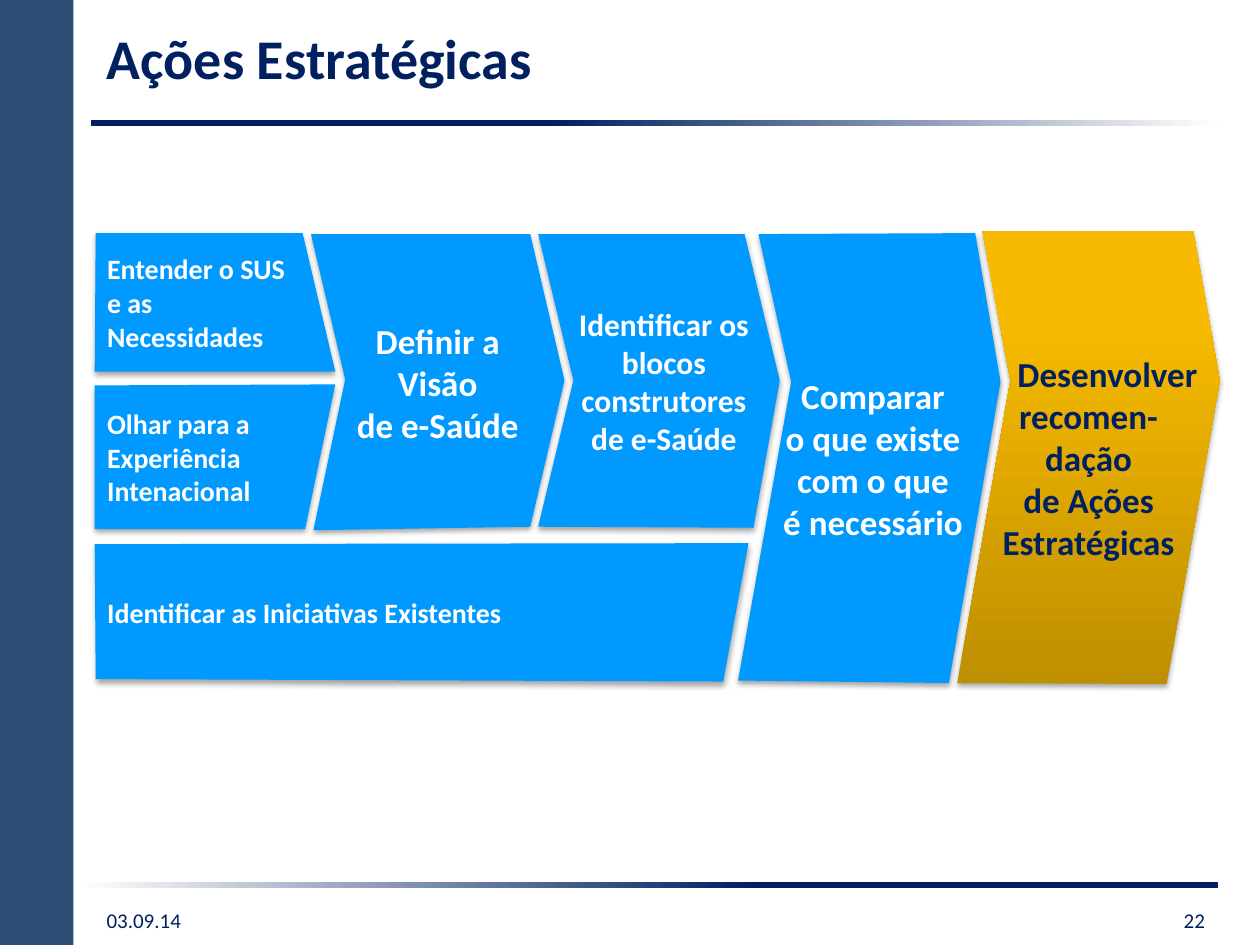
from lxml import etree
from pptx import Presentation, util as u
from pptx.dml.color import RGBColor
from pptx.enum import shapes, text
from pptx.oxml import parse_xml
from pptx.oxml.ns import nsdecls, qn

NAVY = RGBColor(0x00, 0x20, 0x60)
STEEL = RGBColor(0x2C, 0x4D, 0x76)
BLUE = RGBColor(0x00, 0x99, 0xFF)
WHITE = RGBColor(0xFF, 0xFF, 0xFF)
FADE = [(0, NAVY), (41, NAVY), (100, WHITE)]
GOLD = [(0, RGBColor(0xBE, 0x8F, 0x00)), (80, RGBColor(0xF7, 0xBA, 0x00)),
        (100, RGBColor(0xF8, 0xBB, 0x00))]
LEFT, CENTER, RIGHT = text.PP_ALIGN.LEFT, text.PP_ALIGN.CENTER, text.PP_ALIGN.RIGHT


class Deck:
    font_name = "Calibri"

    def __init__(self, slide):
        self.slide = slide

    def paint(self, shape, fill, angle=0):
        """Fill with one colour, or with a list of (percent, colour) stops."""
        shape.line.fill.background()
        if isinstance(fill, RGBColor):
            shape.fill.solid()
            shape.fill.fore_color.rgb = fill
            return
        shape.fill.gradient()
        shape.fill.gradient_angle = angle
        stops = shape._element.spPr.find(qn("a:gradFill")).find(qn("a:gsLst"))
        for stop in list(stops):
            stops.remove(stop)
        for percent, color in fill:
            stop = etree.SubElement(stops, qn("a:gs"), pos=str(percent * 1000))
            etree.SubElement(stop, qn("a:srgbClr"), val=str(color))

    def bar(self, kind, left, top, width, height, fill, rotation=0):
        bar = self.slide.shapes.add_shape(
            kind, u.Cm(left), u.Cm(top), u.Cm(width), u.Cm(height))
        bar.rotation = rotation
        bar.shadow.inherit = False
        self.paint(bar, fill)

    def set_words(self, shape, words, size, color, bold, align):
        frame = shape.text_frame
        frame.word_wrap = True
        frame.vertical_anchor = text.MSO_ANCHOR.MIDDLE
        paragraph = frame.paragraphs[0]
        paragraph.text = words
        paragraph.alignment = align
        font = paragraph.font
        font.name, font.size, font.bold = self.font_name, u.Pt(size), bold
        font.color.rgb = color
        return frame

    def label(self, words, left, top, width, height, size, bold=False, align=LEFT):
        box = self.slide.shapes.add_textbox(
            u.Cm(left), u.Cm(top), u.Cm(width), u.Cm(height))
        self.set_words(box, words, size, NAVY, bold, align)

    def step(self, words, corners, size, align=LEFT, fill=BLUE, color=WHITE,
             inset=0.25, first_indent=0):
        """Shadowed outline through the corners (cm), with its text inside."""
        start, *rest = [(u.Cm(x), u.Cm(y)) for x, y in corners]
        builder = self.slide.shapes.build_freeform(*start)
        builder.add_line_segments(rest, close=True)
        step = builder.convert_to_shape()
        self.paint(step, fill, angle=90)
        self.drop_shadow(step)
        frame = self.set_words(step, words, size, color, True, align)
        frame.margin_left = u.Cm(inset)
        if first_indent:
            properties = frame.paragraphs[0]._p.get_or_add_pPr()
            properties.set("indent", str(u.Cm(first_indent)))

    def drop_shadow(self, shape):
        shape._element.spPr.append(parse_xml(
            f'<a:effectLst {nsdecls("a")}>'
            '<a:outerShdw blurRad="40000" dist="23000" dir="5400000" rotWithShape="0">'
            '<a:srgbClr val="000000"><a:alpha val="35000"/></a:srgbClr>'
            '</a:outerShdw></a:effectLst>'))


def main():
    deck = Presentation()
    deck.slide_width, deck.slide_height = u.Cm(25.4), u.Cm(19.05)
    page = Deck(deck.slides.add_slide(deck.slide_layouts[6]))

    kinds = shapes.MSO_SHAPE
    page.bar(kinds.RECTANGLE, 0, 0, 1.48, 19.05, STEEL)
    page.bar(kinds.ROUNDED_RECTANGLE, 1.83, 2.42, 22.7, 0.12, FADE)
    page.bar(kinds.ROUNDED_RECTANGLE, 1.63, 17.78, 22.93, 0.12, FADE, rotation=180)

    page.label("Ações Estratégicas", 1.9, 0.2, 22.66, 1.9, 32, bold=True)
    page.label("03.09.14", 1.9, 18.03, 5.92, 1.02, 12)
    page.label("22", 18.62, 18.03, 5.92, 1.02, 12, align=RIGHT)

    page.step("Entender o SUS\ne as\nNecessidades",
              [(1.93, 4.7), (6.1, 4.7), (6.76, 7.49), (1.91, 7.49)], 16)
    page.step("Definir a\nVisão\nde e-Saúde",
              [(6.27, 4.72), (10.69, 4.72), (11.38, 7.67), (10.69, 10.62),
               (6.32, 10.69), (6.96, 7.65)], 20, CENTER)
    page.step("Identificar os\nblocos\nconstrutores\nde e-Saúde",
              [(10.85, 4.72), (15.01, 4.72), (15.72, 7.67), (15.19, 10.64),
               (10.85, 10.62), (11.56, 7.67)], 18, CENTER, inset=0.45)
    page.step("Comparar\no que existe\ncom o que\né necessário",
              [(15.29, 4.72), (19.66, 4.7), (20.17, 7.7), (19.13, 13.77),
               (14.88, 13.72), (15.95, 7.7)], 20, CENTER, inset=0.4)
    page.step("Desenvolver\nrecomen-\ndação\nde Ações Estratégicas",
              [(19.81, 4.67), (24.05, 4.65), (24.59, 7.67), (23.52, 13.79),
               (19.3, 13.77), (20.37, 7.67)], 20, CENTER,
              fill=GOLD, color=NAVY, first_indent=0.76)
    page.step("Olhar para a Experiência Intenacional",
              [(1.91, 7.77), (6.76, 7.75), (6.15, 10.67), (1.91, 10.67)], 16)
    page.step("Identificar as Iniciativas Existentes",
              [(1.91, 10.97), (15.09, 10.95), (14.58, 13.74), (1.93, 13.69)], 16)

    deck.save("out.pptx")


if __name__ == "__main__":
    main()
